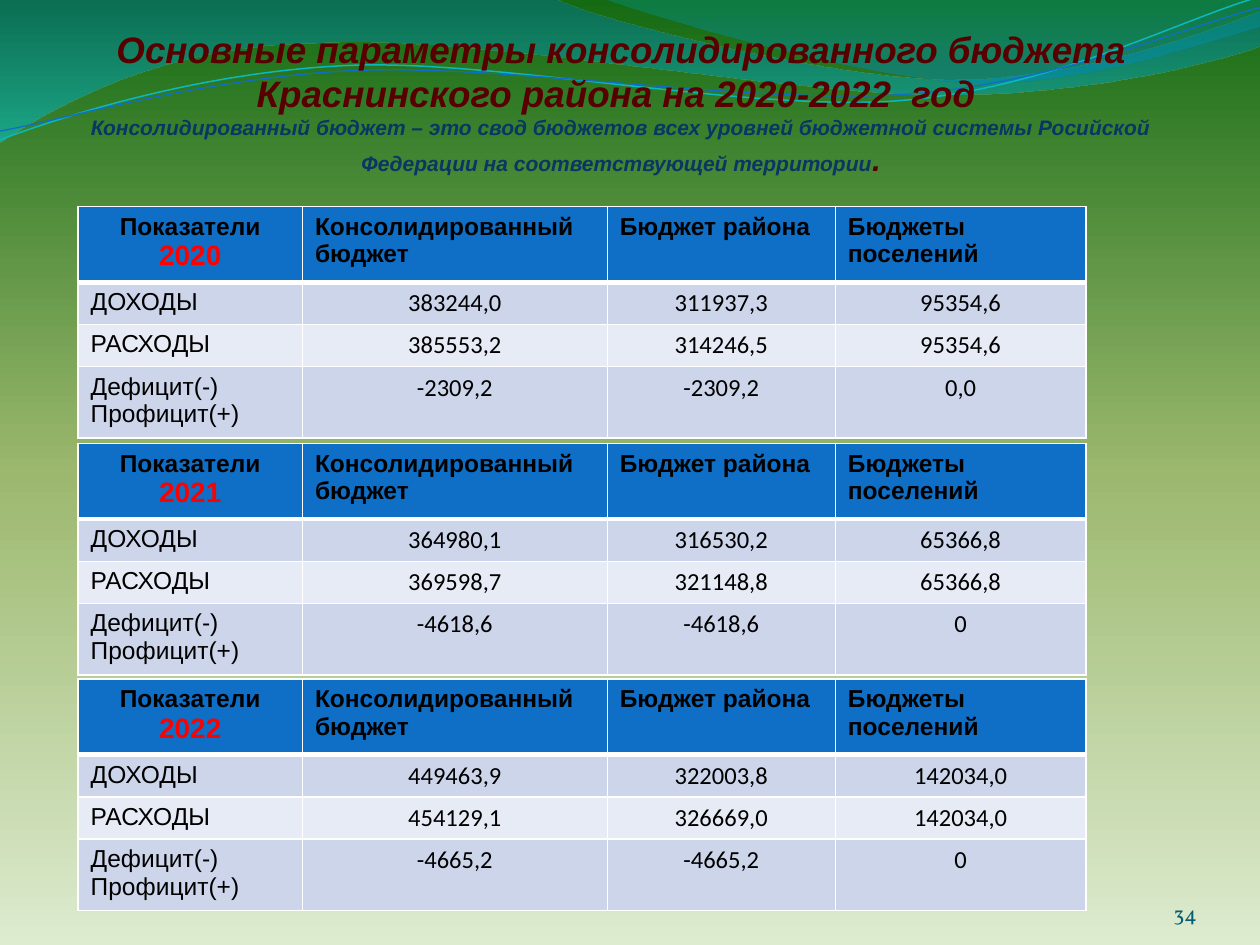
from lxml.etree import SubElement
from pptx import Presentation
from pptx.dml.color import RGBColor
from pptx.enum.text import MSO_ANCHOR, PP_ALIGN
from pptx.oxml.ns import qn
from pptx.util import Inches, Pt

WHITE = RGBColor(0xFF, 0xFF, 0xFF)
BLACK = RGBColor(0x00, 0x00, 0x00)
RED = RGBColor(0xFF, 0x00, 0x00)
MAROON = RGBColor(0x58, 0x00, 0x00)
NAVY = RGBColor(0x08, 0x37, 0x63)
TEAL = RGBColor(0x04, 0x5D, 0x75)
BLUE = RGBColor(0x0F, 0x6F, 0xC6)
CYAN = RGBColor(0x0A, 0xB8, 0xBF)
BAND_DARK = RGBColor(0xCC, 0xD5, 0xEA)
BAND_LIGHT = RGBColor(0xE7, 0xEB, 0xF5)
BACKGROUND = [(0, RGBColor(0xDD, 0xEB, 0xCF), 100),
              (50, RGBColor(0x9C, 0xB8, 0x6E), 100),
              (100, RGBColor(0x15, 0x6B, 0x13), 100)]
LEFT_WAVE_FILL = [(0, RGBColor(0x00, 0x74, 0xA1), 45),
                  (100, RGBColor(0x00, 0xC6, 0xCF), 55)]
RIGHT_WAVE_FILL = [(0, RGBColor(0x00, 0xA1, 0xA9), 30),
                   (80, RGBColor(0x00, 0x8B, 0xBF), 45)]

LEFT_WAVE = [(0, -0.01), (4.4, -0.01),
             (4.76, 0.17, 6.64, 0.63, 7.58, 0.63),
             (8.53, 0.63, 9.58, 0.26, 10, 0.09), (10.01, 0.36),
             (9.83, 0.44, 8.7, 0.76, 7.46, 0.75),
             (6.22, 0.75, 3.82, 0.28, 2.57, 0.34),
             (1.29, 0.35, 0.46, 0.83, -0.01, 1.13)]
RIGHT_WAVE = [(4.79, -0.01), (5.09, 0.11, 6.82, 0.62, 7.69, 0.65),
              (8.56, 0.69, 9.61, 0.32, 10, 0.21), (10, 0)]
CYAN_LINE = [(0, 1.11), (0.48, 0.93, 1.58, 0.57, 2.77, 0.52),
             (3.95, 0.47, 5.93, 0.89, 7.13, 0.8),
             (8.33, 0.71, 9.38, 0.15, 9.98, -0.02)]
BLUE_LINE = [(0, 1.04), (0.47, 0.96, 1.64, 0.61, 2.83, 0.56),
             (4.03, 0.51, 5.97, 0.83, 7.17, 0.75),
             (8.36, 0.67, 9.41, 0.21, 10, 0.06)]

COLUMNS = [1.78, 2.42, 1.81, 1.99]
ROWS = [0.37, 0.25, 0.25, 0.4]
TABLE_HEIGHT = 1.83
BANDS = [BLUE, BAND_DARK, BAND_LIGHT, BAND_DARK]
HEADERS = ["Консолидированный  бюджет", "Бюджет района", "Бюджеты поселений"]
LABELS = [["ДОХОДЫ"], ["РАСХОДЫ"], ["Дефицит(-)", "Профицит(+)"]]
BUDGETS = [
    ("2020", 1.64, [["383244,0", "311937,3", "95354,6"],
                    ["385553,2", "314246,5", "95354,6"],
                    ["-2309,2", "-2309,2", "0,0"]]),
    ("2021", 3.52, [["364980,1", "316530,2", "65366,8"],
                    ["369598,7", "321148,8", "65366,8"],
                    ["-4618,6", "-4618,6", "0"]]),
    ("2022", 5.39, [["449463,9", "322003,8", "142034,0"],
                    ["454129,1", "326669,0", "142034,0"],
                    ["-4665,2", "-4665,2", "0"]]),
]


def set_gradient(fill, owner, stops, angle):
    fill.gradient()
    grad = owner.find(".//" + qn("a:gradFill"))
    gs_list = grad.find(qn("a:gsLst"))
    gs_list.clear()
    for position, color, opacity in stops:
        gs = SubElement(gs_list, qn("a:gs"), pos=str(position * 1000))
        clr = SubElement(gs, qn("a:srgbClr"), val=str(color))
        if opacity < 100:
            SubElement(clr, qn("a:alpha"), val=str(opacity * 1000))
    grad.find(qn("a:lin")).set("ang", str(angle * 60000))


def add_curve(slide, steps, close):
    start, *ends = [(Inches(step[-2]), Inches(step[-1])) for step in steps]
    builder = slide.shapes.build_freeform(*start)
    builder.add_line_segments(ends, close=close)
    sp = builder.convert_to_shape()
    sp.shadow.inherit = False
    segments = list(sp.element.iter(qn("a:lnTo")))
    for segment, step in zip(segments, steps[1:]):
        if len(step) == 2:
            continue
        curve = segment.makeelement(qn("a:cubicBezTo"))
        for x, y in zip(step[::2], step[1::2]):
            SubElement(curve, qn("a:pt"), x=str(Inches(x) - sp.left),
                       y=str(Inches(y) - sp.top))
        segment.getparent().replace(segment, curve)
    return sp


def add_wave(slide, steps, stops):
    sp = add_curve(slide, steps, True)
    set_gradient(sp.fill, sp.element.spPr, stops, 90)
    sp.line.fill.background()


def add_wave_line(slide, steps, color, width):
    sp = add_curve(slide, steps, False)
    sp.fill.background()
    sp.line.color.rgb = color
    sp.line.width = Pt(width)


def set_font(font, size, color, name="Arial", bold=False, italic=False):
    font.size = Pt(size)
    font.color.rgb = color
    font.name = name
    font.bold = bold
    font.italic = italic


def add_paragraph(tf, text, align, *style, **options):
    first = tf.paragraphs[0]
    p = tf.add_paragraph() if first.runs else first
    p.alignment = align
    p.add_run().text = text
    set_font(p.font, *style, **options)


def add_text_box(slide, left, top, width, height, top_inset=0):
    sp = slide.shapes.add_textbox(Inches(left), Inches(top),
                                  Inches(width), Inches(height))
    tf = sp.text_frame
    tf.word_wrap = True
    tf.vertical_anchor = MSO_ANCHOR.BOTTOM
    tf.margin_left = tf.margin_right = tf.margin_bottom = 0
    tf.margin_top = Inches(top_inset)
    return tf


def add_title(slide):
    tf = add_text_box(slide, 0.62, 0, 8.62, 1.41, 0.05)
    for text in ("Основные параметры консолидированного бюджета",
                 "Краснинского района на 2020-2022  год "):
        add_paragraph(tf, text, PP_ALIGN.CENTER, 21, MAROON, bold=True, italic=True)
    p = tf.add_paragraph()
    p.alignment = PP_ALIGN.CENTER
    for text, size, color in (
            ("Консолидированный бюджет – это свод бюджетов всех уровней бюджетной "
             "системы Росийской Федерации на соответствующей территории", 12, NAVY),
            (".", 18, MAROON)):
        r = p.add_run()
        r.text = text
        set_font(r.font, size, color, bold=True, italic=True)


def style_cell(cell, color, bottom_width):
    tc_pr = cell._tc.get_or_add_tcPr()
    for side, width in (("L", 1), ("R", 1), ("T", 1), ("B", bottom_width)):
        ln = SubElement(tc_pr, qn("a:ln" + side), w=str(Pt(width)))
        fill = SubElement(ln, qn("a:solidFill"))
        SubElement(fill, qn("a:srgbClr"), val=str(WHITE))
    cell.fill.solid()
    cell.fill.fore_color.rgb = color


def add_budget_table(slide, year, top, values):
    frame = slide.shapes.add_table(len(ROWS), len(COLUMNS), Inches(0.62), Inches(top),
                                   Inches(sum(COLUMNS)), Inches(TABLE_HEIGHT))
    table = frame.table
    table.first_row = table.horz_banding = False
    for column, width in zip(table.columns, COLUMNS):
        column.width = Inches(width)
    for i, (row, height) in enumerate(zip(table.rows, ROWS)):
        row.height = Inches(height)
        for cell in row.cells:
            style_cell(cell, BANDS[i], 1 if i else 3)
    frame.height = Inches(TABLE_HEIGHT)

    corner = table.cell(0, 0).text_frame
    add_paragraph(corner, "Показатели", PP_ALIGN.CENTER, 14, BLACK, bold=True)
    add_paragraph(corner, year, PP_ALIGN.CENTER, 16, RED, bold=True)
    for j, header in enumerate(HEADERS, 1):
        add_paragraph(table.cell(0, j).text_frame, header, PP_ALIGN.LEFT,
                      14, BLACK, bold=True)
    for i, (label, numbers) in enumerate(zip(LABELS, values), 1):
        for line in label:
            add_paragraph(table.cell(i, 0).text_frame, line, PP_ALIGN.LEFT, 14, BLACK)
        for j, number in enumerate(numbers, 1):
            add_paragraph(table.cell(i, j).text_frame, number, PP_ALIGN.CENTER,
                          14, BLACK, "Calibri")


def main():
    prs = Presentation()
    prs.slide_width, prs.slide_height = Inches(10), Inches(7.5)
    slide = prs.slides.add_slide(prs.slide_layouts[6])
    set_gradient(slide.background.fill, slide.element, BACKGROUND, 270)
    add_wave(slide, LEFT_WAVE, LEFT_WAVE_FILL)
    add_wave(slide, RIGHT_WAVE, RIGHT_WAVE_FILL)
    add_wave_line(slide, CYAN_LINE, CYAN, 0.85)
    add_wave_line(slide, BLUE_LINE, BLUE, 0.75)
    add_title(slide)
    for year, top, values in BUDGETS:
        add_budget_table(slide, year, top, values)
    number = add_text_box(slide, 8.67, 6.95, 0.83, 0.4)
    add_paragraph(number, "34", PP_ALIGN.RIGHT, 12, TEAL, "Vollkorn")
    prs.save("out.pptx")


if __name__ == "__main__":
    main()
